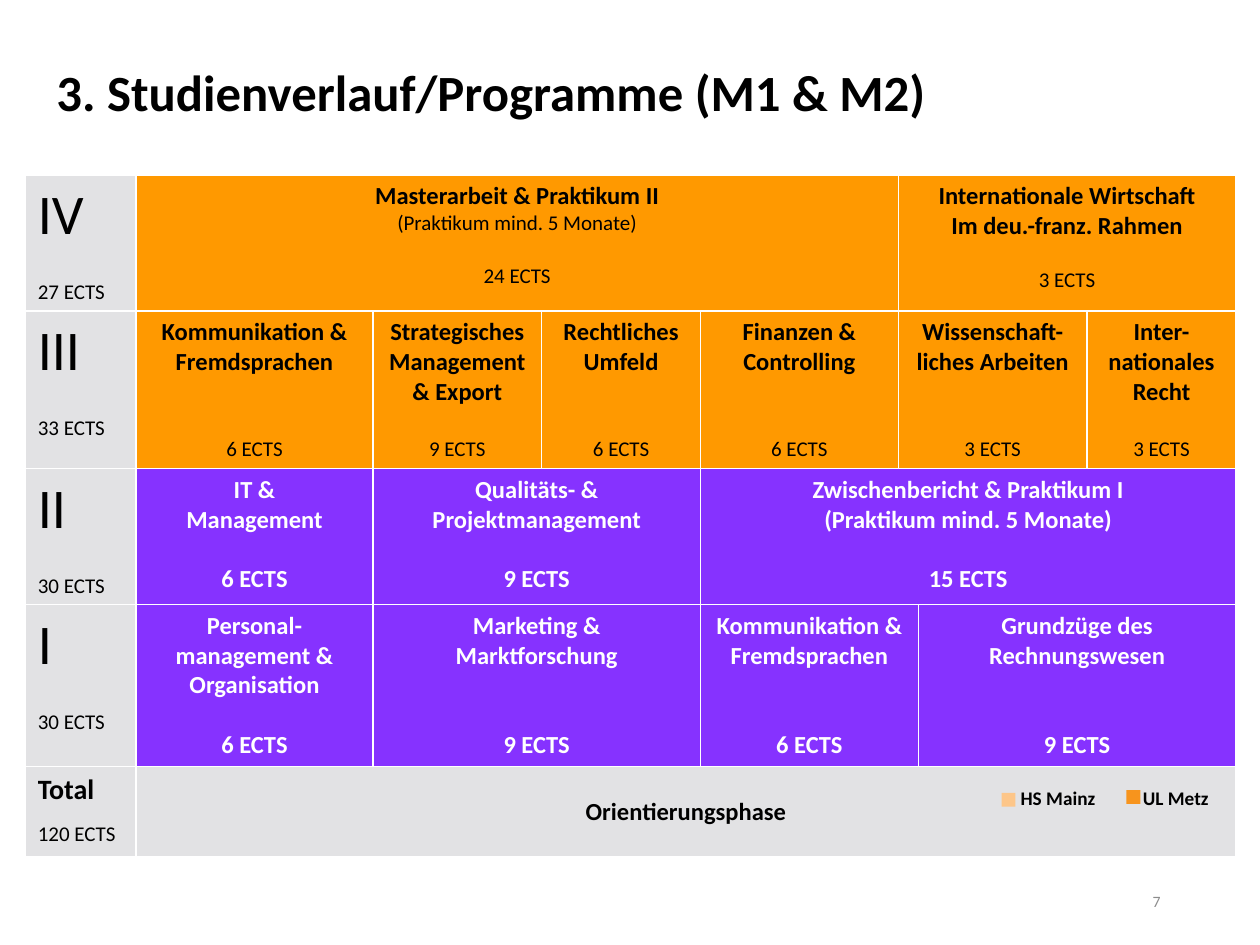
from dataclasses import dataclass

from lxml import etree
from pptx import Presentation
from pptx import util as u
from pptx.dml.color import RGBColor
from pptx.enum import shapes, text
from pptx.oxml import ns

WIDTH, HEIGHT = u.Inches(10), u.Inches(7.5)


@dataclass(frozen=True)
class Theme:
    font: str = "Calibri"
    black: str = "000000"
    white: str = "FFFFFF"
    grey: str = "E2E2E4"
    number: str = "8C8C8C"
    orange: str = "FF9900"
    purple: str = "8632FF"
    mainz: str = "FDC689"
    metz: str = "F7941D"
    title: int = 29
    numeral: int = 32
    total: int = 16
    module: int = 14
    credit: int = 12
    legend: int = 11
    page_number: int = 9
    blank_line: int = 17


THEME = Theme()
LEFT, CENTER, RIGHT = text.PP_ALIGN.LEFT, text.PP_ALIGN.CENTER, text.PP_ALIGN.RIGHT

# Column widths and row heights in percent of the slide
COLUMNS = [8.8, 18.8, 13.4, 12.6, 15.7, 1.6, 13.4, 11.8]
ROWS = [14.4, 16.7, 14.4, 17.1, 9.6]

# Semester, credits, then modules: columns spanned, title, subtitle, credits, blank lines
SEMESTERS = [
    ("IV", "27 ECTS", [
        (4, "Masterarbeit & Praktikum II", "(Praktikum mind. 5 Monate)", "24 ECTS", 0.9),
        (3, "Internationale Wirtschaft\nIm deu.-franz. Rahmen", "", "3 ECTS", 0.9)]),
    ("III", "33 ECTS", [
        (1, "Kommunikation &\nFremdsprachen", "", "6 ECTS", 2),
        (1, "Strategisches Management & Export", "", "9 ECTS", 1),
        (1, "Rechtliches\nUmfeld", "", "6 ECTS", 2),
        (1, "Finanzen &\nControlling", "", "6 ECTS", 2),
        (2, "Wissenschaft-liches Arbeiten", "", "3 ECTS", 2),
        (1, "Inter-nationales\nRecht", "", "3 ECTS", 1)]),
    ("II", "30 ECTS", [
        (1, "IT &\nManagement", "", "6 ECTS", 1),
        (2, "Qualitäts- &\nProjektmanagement", "", "9 ECTS", 1),
        (4, "Zwischenbericht & Praktikum I\n(Praktikum mind. 5 Monate)", "", "15 ECTS", 1)]),
    ("I", "30 ECTS", [
        (1, "Personal-management & Organisation", "", "6 ECTS", 1),
        (2, "Marketing &\nMarktforschung", "", "9 ECTS", 2),
        (2, "Kommunikation & Fremdsprachen", "", "6 ECTS", 2),
        (2, "Grundzüge des\nRechnungswesen", "", "9 ECTS", 2)]),
]


def across(percent):
    return round(WIDTH * percent / 100)


def down(percent):
    return round(HEIGHT * percent / 100)


def area(left, top, width, height):
    return across(left), down(top), across(width), down(height)


def write(para, words, size, color=THEME.black, bold=False, align=LEFT, gap=0):
    para.text = words
    para.alignment = align
    if gap:
        para.space_before = u.Pt(gap)
    font = para.font
    font.name, font.size, font.bold = THEME.font, u.Pt(size), bold
    font.color.rgb = RGBColor.from_string(color)


def add_text(page, place, anchor=text.MSO_ANCHOR.TOP):
    """Add an empty text box and return its frame."""
    frame = page.shapes.add_textbox(*place).text_frame
    frame.word_wrap = True
    frame.vertical_anchor = anchor
    return frame


def add_swatch(page, left, top, color):
    side = across(1.1)
    box = page.shapes.add_shape(shapes.MSO_SHAPE.RECTANGLE, across(left), down(top), side, side)
    box.shadow.inherit = False
    box.fill.solid()
    box.fill.fore_color.rgb = RGBColor.from_string(color)
    box.line.fill.background()


def style_cell(cell, color):
    """Give a cell white one-point borders and a plain fill."""
    properties = cell._tc.get_or_add_tcPr()
    for side in ("a:lnL", "a:lnR", "a:lnT", "a:lnB"):
        line = etree.SubElement(properties, ns.qn(side), w=str(u.Pt(1)))
        fill = etree.SubElement(line, ns.qn("a:solidFill"))
        etree.SubElement(fill, ns.qn("a:srgbClr"), val=THEME.white)
    cell.fill.solid()
    cell.fill.fore_color.rgb = RGBColor.from_string(color)


def fill_label(cell, name, credits, size, gap, bold=False):
    frame = cell.text_frame
    write(frame.paragraphs[0], name, size, bold=bold)
    write(frame.add_paragraph(), credits, THEME.credit, gap=gap)


def fill_module(cell, title, subtitle, credits, blanks, master):
    color = THEME.black if master else THEME.white
    frame = cell.text_frame
    write(frame.paragraphs[0], title, THEME.module, color, True, CENTER)
    if subtitle:
        write(frame.add_paragraph(), subtitle, THEME.credit, color, align=CENTER)
    size = THEME.credit if master else THEME.module
    write(frame.add_paragraph(), credits, size, color, not master, CENTER,
          blanks * THEME.blank_line)


def add_plan(page):
    place = area(2, 18.5, sum(COLUMNS), sum(ROWS))
    table = page.shapes.add_table(len(ROWS), len(COLUMNS), *place).table
    table.first_row = table.horz_banding = False
    for column, width in zip(table.columns, COLUMNS):
        column.width = across(width)
    for row, height in zip(table.rows, ROWS):
        row.height = down(height)

    fills = [THEME.orange] * 2 + [THEME.purple] * 2 + [THEME.grey]
    for row, color in enumerate(fills):
        for column in range(len(COLUMNS)):
            style_cell(table.cell(row, column), color if column else THEME.grey)

    for row, (name, credits, modules) in enumerate(SEMESTERS):
        fill_label(table.cell(row, 0), name, credits, THEME.numeral, THEME.blank_line)
        column = 1
        for span, *content in modules:
            cell = table.cell(row, column)
            if span > 1:
                cell.merge(table.cell(row, column + span - 1))
            fill_module(cell, *content, master=fills[row] == THEME.orange)
            column += span

    last = len(ROWS) - 1
    fill_label(table.cell(last, 0), "Total", "120 ECTS", THEME.total, THEME.blank_line / 2, True)
    phase = table.cell(last, 1)
    phase.merge(table.cell(last, len(COLUMNS) - 1))
    phase.vertical_anchor = text.MSO_ANCHOR.MIDDLE
    write(phase.text_frame.paragraphs[0], "Orientierungsphase", THEME.module,
          bold=True, align=CENTER)


def add_legend(page):
    frame = add_text(page, area(80.7, 82.5, 17.3, 3.9))
    frame.margin_left = u.Inches(0.03)
    para = frame.paragraphs[0]
    tabs = etree.SubElement(para._p.get_or_add_pPr(), ns.qn("a:tabLst"))
    etree.SubElement(tabs, ns.qn("a:tab"), pos=str(across(9.7)), algn="l")
    write(para, "HS Mainz\tUL Metz", THEME.legend, bold=True)
    add_swatch(page, 79.5, 83.9, THEME.mainz)
    add_swatch(page, 89.4, 83.6, THEME.metz)


def main():
    deck = Presentation()
    deck.slide_width, deck.slide_height = WIDTH, HEIGHT
    page = deck.slides.add_slide(deck.slide_layouts[6])

    title = add_text(page, area(3.5, 2.8, 90.6, 14.5), text.MSO_ANCHOR.MIDDLE).paragraphs[0]
    title.line_spacing = 0.9
    write(title, "3. Studienverlauf/Programme (M1 & M2)", THEME.title, bold=True)
    number = add_text(page, area(70.6, 92.7, 22.5, 5.3), text.MSO_ANCHOR.MIDDLE).paragraphs[0]
    write(number, "7", THEME.page_number, THEME.number, align=RIGHT)
    add_plan(page)
    add_legend(page)

    deck.save("out.pptx")


if __name__ == "__main__":
    main()
